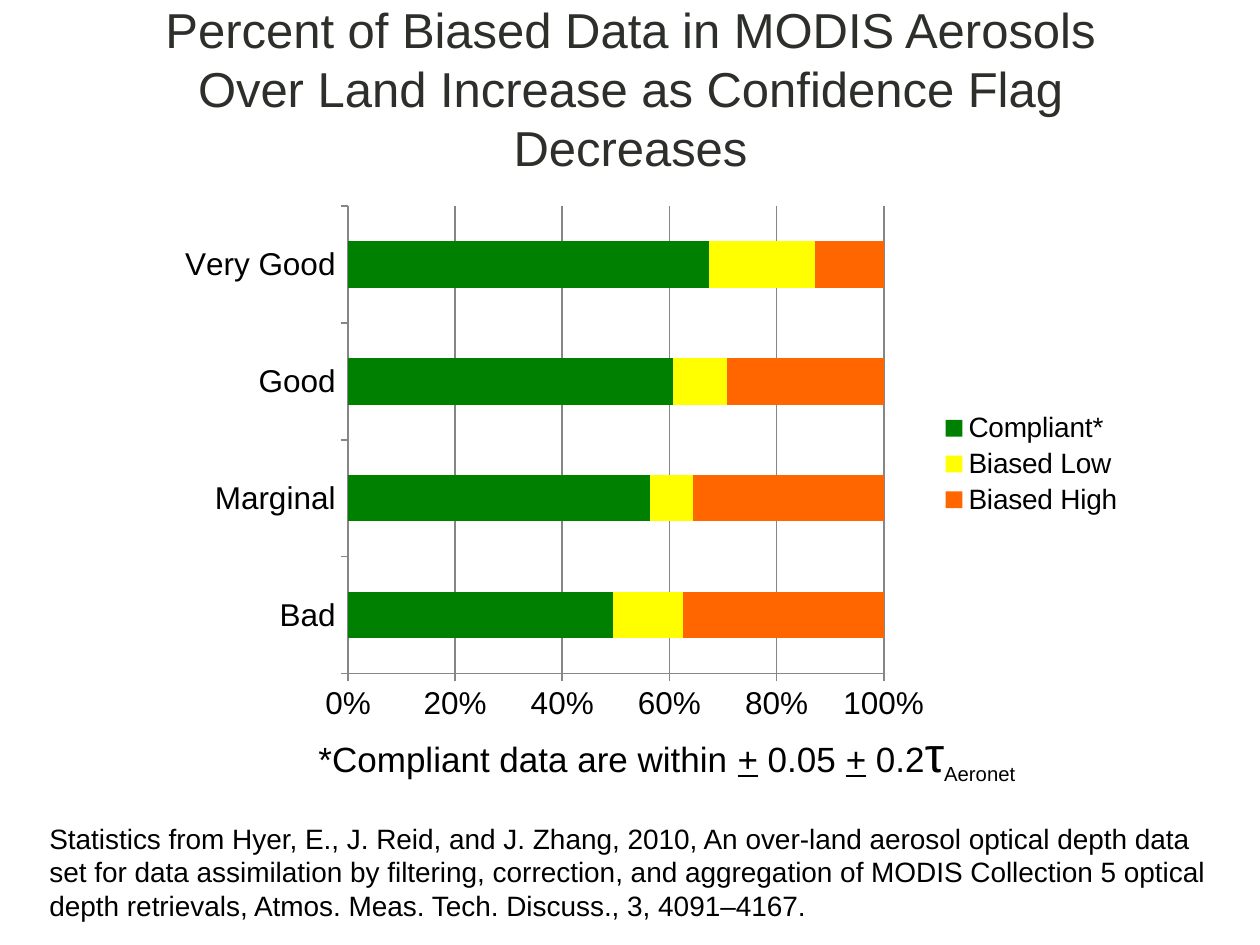
from dataclasses import dataclass

from lxml import etree
from pptx import Presentation
from pptx.chart.data import CategoryChartData
from pptx.dml.color import RGBColor
from pptx.enum.chart import XL_CHART_TYPE, XL_LEGEND_POSITION, XL_TICK_MARK
from pptx.enum.text import MSO_ANCHOR, MSO_AUTO_SIZE, PP_ALIGN
from pptx.oxml.ns import qn
from pptx.util import Emu, Pt

STACKED_BAR = XL_CHART_TYPE.BAR_STACKED_100
LEGEND_RIGHT = XL_LEGEND_POSITION.RIGHT
TICK_OUTSIDE = XL_TICK_MARK.OUTSIDE
TICK_NONE = XL_TICK_MARK.NONE
MIDDLE = MSO_ANCHOR.MIDDLE
FIT_SHAPE = MSO_AUTO_SIZE.SHAPE_TO_FIT_TEXT
FIT_NONE = MSO_AUTO_SIZE.NONE
CENTER = PP_ALIGN.CENTER
LEFT = PP_ALIGN.LEFT

EMU_PER_PX = 914400 / 126


@dataclass(frozen=True)
class Theme:
    font: str = "Arial"
    title_color: str = "2D2F2B"
    text_color: str = "000000"
    line_color: str = "868686"
    compliant: str = "008000"
    biased_low: str = "FFFF00"
    biased_high: str = "FF6600"
    title_size: int = 28
    symbol_size: int = 28
    note_size: int = 20
    axis_size: int = 18
    small_size: int = 16


THEME = Theme()

TITLE = ("Percent of Biased Data in MODIS Aerosols Over Land Increase "
         "as Confidence Flag Decreases")
CITATION = ("Statistics from Hyer, E., J. Reid, and J. Zhang, 2010, An over-land "
            "aerosol optical depth data set for data assimilation by filtering, "
            "correction, and aggregation of MODIS Collection 5 optical depth "
            "retrievals, Atmos. Meas. Tech. Discuss., 3, 4091–4167.")
CONFIDENCE_FLAGS = ["Bad", "Marginal", "Good", "Very Good"]
SERIES = [
    ("Compliant*", [49, 57, 60, 68], THEME.compliant),
    ("Biased Low", [13, 8, 10, 20], THEME.biased_low),
    ("Biased High", [37, 36, 29, 13], THEME.biased_high),
]
PLOT_AREA = {"x": 0.19, "y": 0.02, "w": 0.55, "h": 0.87}


def px(value):
    return Emu(round(value * EMU_PER_PX))


def style_font(font, size, color=THEME.text_color):
    font.name = THEME.font
    font.size = Pt(size)
    font.bold = False
    font.color.rgb = RGBColor.from_string(color)


def add_run(paragraph, text, size, color=THEME.text_color, underline=False, baseline=0):
    run = paragraph.add_run()
    run.text = text
    style_font(run.font, size, color)
    if underline:
        run.font.underline = True
    if baseline:
        run.font._element.set("baseline", str(baseline * 1000))


def set_title(slide):
    title = slide.shapes.title
    title.left, title.top, title.width, title.height = map(px, (95, 9, 1071, 158))
    frame = title.text_frame
    frame.word_wrap = True
    frame.auto_size = FIT_NONE
    frame.vertical_anchor = MIDDLE
    paragraph = frame.paragraphs[0]
    paragraph.alignment = CENTER
    add_run(paragraph, TITLE, THEME.title_size, THEME.title_color)


def add_text(slide, box, runs, wrap=True):
    frame = slide.shapes.add_textbox(*map(px, box)).text_frame
    frame.word_wrap = wrap
    frame.auto_size = FIT_SHAPE
    paragraph = frame.paragraphs[0]
    paragraph.alignment = LEFT
    for text, size, options in runs:
        add_run(paragraph, text, size, **options)


def style_line(line):
    line.color.rgb = RGBColor.from_string(THEME.line_color)
    line.width = Pt(1)


def style_axis(axis):
    axis.major_tick_mark = TICK_OUTSIDE
    axis.minor_tick_mark = TICK_NONE
    style_font(axis.tick_labels.font, THEME.axis_size)
    style_line(axis.format.line)


def place_plot_area(chart):
    plot_area = chart._chartSpace.chart.plotArea
    for old_layout in plot_area.findall(qn("c:layout")):
        plot_area.remove(old_layout)
    layout = etree.Element(qn("c:layout"))
    manual = etree.SubElement(layout, qn("c:manualLayout"))
    settings = {"layoutTarget": "inner", "xMode": "edge", "yMode": "edge", **PLOT_AREA}
    for tag, value in settings.items():
        etree.SubElement(manual, qn(f"c:{tag}")).set("val", str(value))
    plot_area.insert(0, layout)


def add_bias_chart(slide, box):
    data = CategoryChartData(number_format="0")
    data.categories = CONFIDENCE_FLAGS
    for name, values, _ in SERIES:
        data.add_series(name, values)
    chart = slide.shapes.add_chart(STACKED_BAR, *map(px, box), data).chart
    chart.has_title = False
    style_font(chart.font, 10)

    plot = chart.plots[0]
    plot.vary_by_categories = False
    plot.gap_width = 150
    plot.overlap = 100
    for series, (_, _, color) in zip(plot.series, SERIES):
        series.format.fill.solid()
        series.format.fill.fore_color.rgb = RGBColor.from_string(color)

    style_axis(chart.category_axis)
    value_axis = chart.value_axis
    style_axis(value_axis)
    value_axis.minimum_scale = 0
    value_axis.maximum_scale = 1
    value_axis.major_unit = 0.2
    value_axis.tick_labels.number_format = "0%"
    value_axis.tick_labels.number_format_is_linked = False
    value_axis.has_major_gridlines = True
    style_line(value_axis.major_gridlines.format.line)

    chart.has_legend = True
    chart.legend.position = LEGEND_RIGHT
    chart.legend.include_in_layout = False
    style_font(chart.legend.font, THEME.small_size)
    place_plot_area(chart)


def main():
    presentation = Presentation()
    presentation.slide_width = px(1260)
    presentation.slide_height = px(945)
    slide = presentation.slides.add_slide(presentation.slide_layouts[5])
    set_title(slide)
    add_bias_chart(slide, (163, 195, 974, 538))
    note = THEME.note_size
    add_text(slide, (306, 717, 726, 72), [
        ("*Compliant data are within ", note, {}),
        ("+", note, {"underline": True}),
        (" 0.05 ", note, {}),
        ("+", note, {"underline": True}),
        (" 0.2", note, {}),
        ("τ", THEME.symbol_size, {}),
        ("Aeronet", note, {"baseline": -25}),
    ], wrap=False)
    add_text(slide, (37, 815, 1186, 115), [(CITATION, THEME.small_size, {})])
    presentation.save("out.pptx")


if __name__ == "__main__":
    main()
